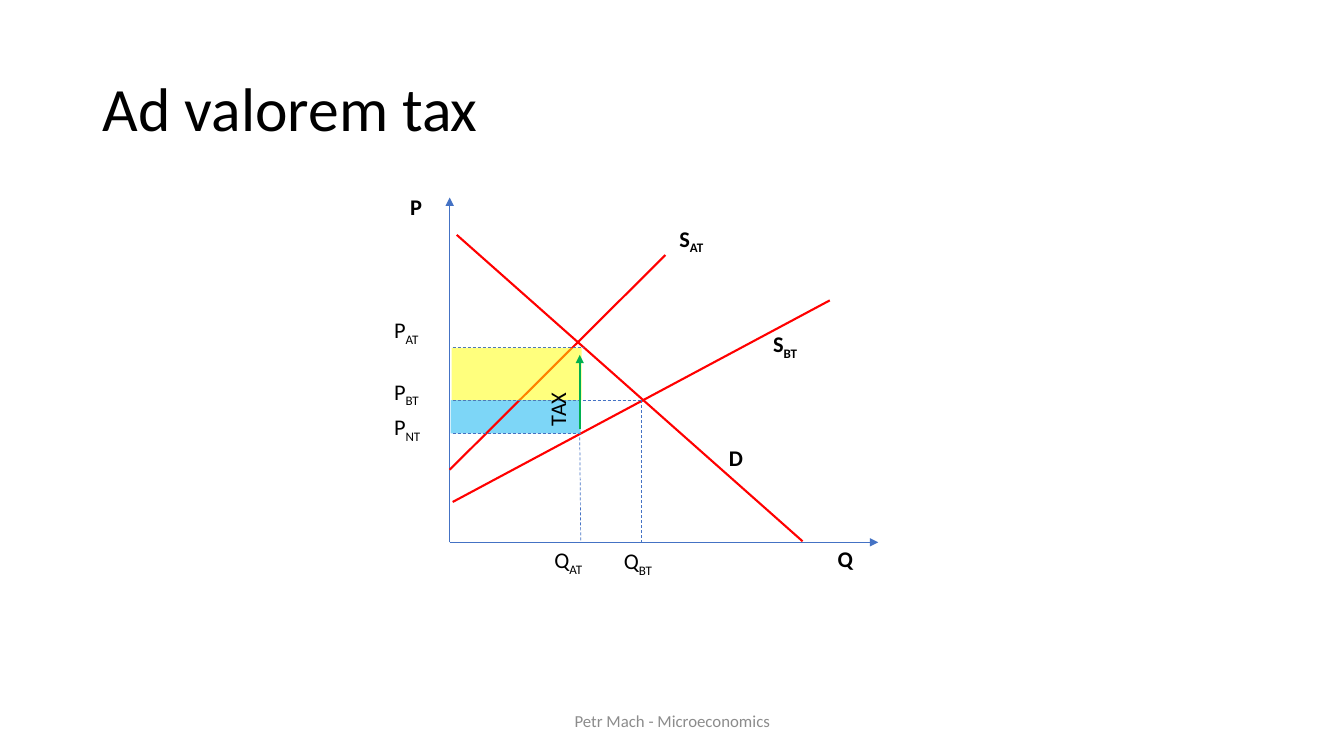
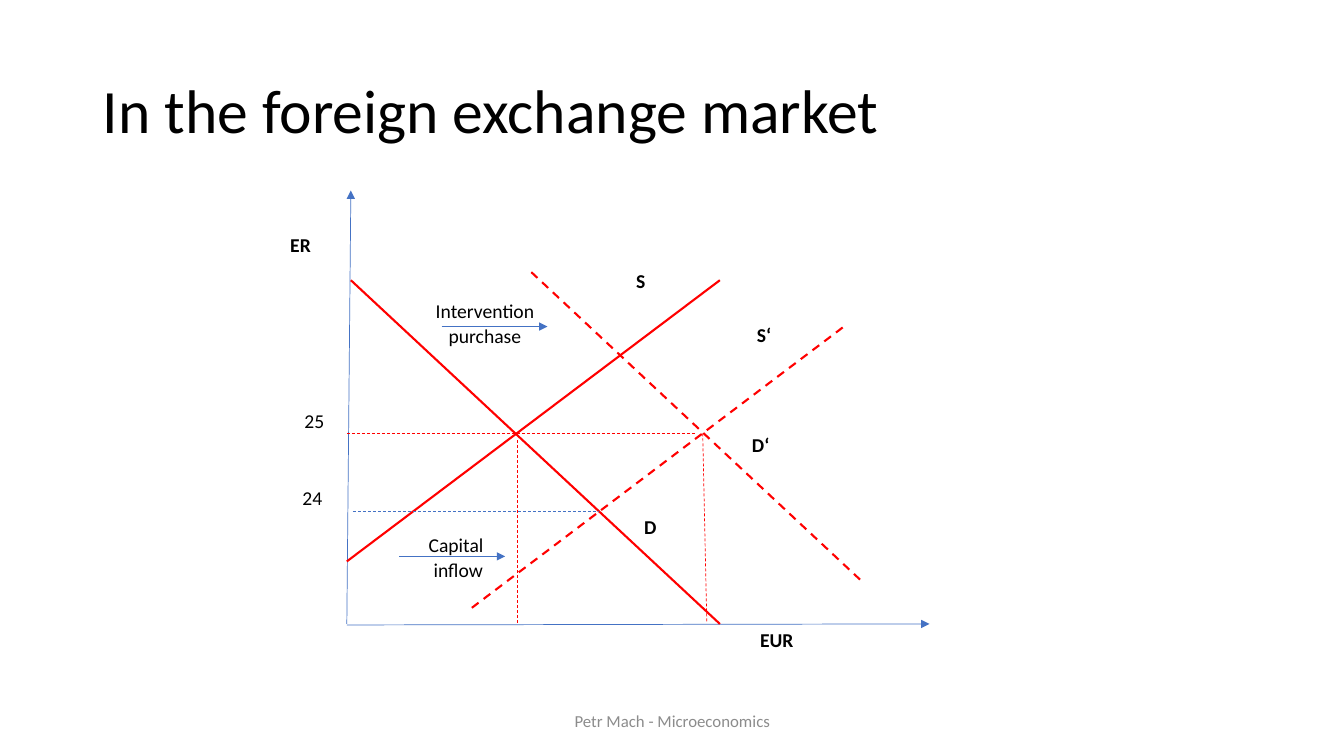
from dataclasses import dataclass

from lxml.etree import SubElement
from pptx import Presentation
from pptx.dml.color import RGBColor as Rgb
from pptx.enum.dml import MSO_LINE as Dash
from pptx.enum.shapes import MSO_CONNECTOR as Connector, MSO_SHAPE as Shape
from pptx.enum.text import MSO_ANCHOR as Anchor, MSO_AUTO_SIZE as AutoSize, PP_ALIGN as Align
from pptx.oxml.ns import qn
from pptx.util import Emu, Pt

PX = 9144  # EMU per px: 100 px to the inch


def px(*lengths):
    return [Emu(length * PX) for length in lengths]


@dataclass(frozen=True)
class Theme:
    font: str = "Calibri"
    ink: str = "000000"
    paper: str = "FFFFFF"
    muted: str = "8C8C8C"
    axis: str = "4472C4"
    curve: str = "FF0000"
    tax: str = "00B050"
    buyer_share: str = "FFFF00"
    seller_share: str = "00B0F0"
    title_size: int = 44
    footer_size: int = 12
    thin: float = 0.5
    thick: float = 1.5


class Deck:
    """Holds the style and the slide being drawn."""

    def __init__(self, theme):
        self.theme = theme
        self.prs = Presentation()
        self.prs.slide_width, self.prs.slide_height = px(1333, 750)
        self.label_size = 14

    def new_slide(self, title, title_top, label_size):
        self.slide = self.prs.slides.add_slide(self.prs.slide_layouts[5])
        self.label_size = label_size
        heading = self.slide.shapes.title
        heading.left, heading.top, heading.width, heading.height = px(92, title_top, 1150, 145)
        self.set_text(heading, title, self.theme.title_size, anchor=Anchor.MIDDLE, spacing=0.9)
        footer = self.slide.shapes.add_textbox(*px(442, 695, 450, 40))
        self.set_text(footer, "Petr Mach - Microeconomics", self.theme.footer_size,
                      color=self.theme.muted, align=Align.CENTER, anchor=Anchor.MIDDLE, spacing=1)

    def set_text(self, box, text, size, sub="", bold=False, color=None,
                 align=Align.LEFT, anchor=Anchor.TOP, spacing=1.07):
        frame = box.text_frame
        frame.word_wrap = True
        frame.auto_size = AutoSize.NONE
        frame.vertical_anchor = anchor
        paragraph = frame.paragraphs[0]
        paragraph.alignment = align
        paragraph.line_spacing = spacing

        def add_run(words):
            run = paragraph.add_run()
            run.text = words
            run.font.name = self.theme.font
            run.font.size = Pt(size)
            run.font.bold = bold
            run.font.color.rgb = Rgb.from_string(color or self.theme.ink)
            return run

        for number, line in enumerate(text.split("\n")):
            if number:
                paragraph.add_line_break()
            add_run(line)
        if sub:
            add_run(sub)._r.get_or_add_rPr().set("baseline", "-25000")

    def rectangle(self, at, color, opacity=100):
        box = self.slide.shapes.add_shape(Shape.RECTANGLE, *px(*at))
        box.shadow.inherit = False
        box.line.fill.background()
        box.fill.solid()
        box.fill.fore_color.rgb = Rgb.from_string(color)
        if opacity < 100:
            tint = box._element.spPr.find(".//" + qn("a:srgbClr"))
            SubElement(tint, qn("a:alpha")).set("val", str(opacity * 1000))
        return box

    def label(self, at, text, sub="", bold=False, align=Align.LEFT):
        self.set_text(self.rectangle(at, self.theme.paper), text, self.label_size,
                      sub, bold, align=align)

    def turned_label(self, at, text):
        box = self.slide.shapes.add_textbox(*px(*at))
        box.rotation = 270
        self.set_text(box, text, self.label_size)

    def line(self, start, end, color, width, dashed=False, arrow=False):
        stroke = self.slide.shapes.add_connector(Connector.STRAIGHT, *px(*start, *end))
        stroke.line.color.rgb = Rgb.from_string(color)
        stroke.line.width = Pt(width)
        if dashed:
            stroke.line.dash_style = Dash.DASH
        if arrow:
            outline = stroke._element.spPr.find(qn("a:ln"))
            SubElement(outline, qn("a:tailEnd")).set("type", "triangle")
        SubElement(stroke._element.spPr, qn("a:effectLst"))

    def arrow(self, start, end):
        self.line(start, end, self.theme.axis, self.theme.thin, arrow=True)

    def curve(self, start, end, dashed=False):
        self.line(start, end, self.theme.curve, self.theme.thick, dashed)

    def guide(self, start, end, color=None):
        self.line(start, end, color or self.theme.axis, self.theme.thin, dashed=True)


def ad_valorem_tax(deck):
    theme = deck.theme
    deck.new_slide("Ad valorem tax", 38, label_size=16)
    axis_x, axis_y, guide_x = 446, 538, 449
    price_after, price_before, price_net = 345, 397, 430
    quantity_after, quantity_before = 576, 636

    # Price and curve labels, with the sellers' tax share among them
    deck.label((381, 403, 73, 52), "P", "NT")
    deck.label((381, 368, 73, 47), "P", "BT")
    deck.rectangle((447, price_before, 129, price_net - price_before), theme.seller_share, 51)
    for at, letter, sub, bold in (
            ((664, 216, 106, 60), "S", "AT", True),
            ((540, 535, 113, 53), "Q", "AT", False),
            ((609, 536, 113, 53), "Q", "BT", False),
            ((381, 307, 73, 61), "P", "AT", False),
            ((713, 434, 57, 47), "D", "", True),
            ((757, 321, 91, 47), "S", "BT", True),
            ((821, 534, 57, 47), "Q", "", True),
            ((397, 185, 57, 47), "P", "", True)):
        deck.label(at, letter, sub, bold)

    # Axes, supply before and after tax, demand
    deck.arrow((axis_x, axis_y), (axis_x, 196))
    deck.arrow((axis_x, axis_y), (871, axis_y))
    deck.curve((449, 498), (823, 298))
    deck.curve((453, 233), (796, 537))
    deck.curve((axis_x, 466), (660, 253))

    # Guides from the equilibria to the axes
    for price, quantity in ((price_before, quantity_before), (price_after, 579),
                            (price_net, quantity_after)):
        deck.guide((guide_x, price), (quantity, price))
    deck.guide((575, 434), (quantity_after, axis_y))
    deck.guide((quantity_before, price_before), (quantity_before, axis_y))

    # Buyers' share and the tax itself
    deck.rectangle((448, price_after, 129, price_before - price_after), theme.buyer_share, 51)
    deck.line((575, 426), (575, 352), theme.tax, theme.thick, arrow=True)
    deck.turned_label((505, 349, 111, 56), "TAX")


def foreign_exchange(deck):
    theme = deck.theme
    deck.new_slide("In the foreign exchange market", 40, label_size=14)
    axis_x, axis_y = 344, 619
    rate_pegged, rate_free = 430, 507

    # Labels
    for at, text, bold, align in (
            ((392, 522, 125, 88), "Capital \ninflow", False, Align.CENTER),
            ((290, 476, 79, 74), "24", False, Align.LEFT),
            ((741, 314, 90, 53), "S‘", True, Align.LEFT),
            ((736, 423, 91, 53), "D‘", True, Align.LEFT),
            ((395, 290, 172, 88), "Intervention purchase", False, Align.CENTER),
            ((292, 399, 78, 53), "25", False, Align.LEFT),
            ((629, 504, 61, 53), "D", True, Align.LEFT),
            ((621, 260, 61, 53), "S", True, Align.LEFT),
            ((744, 616, 109, 53), "EUR", True, Align.LEFT),
            ((278, 225, 75, 53), "ER", True, Align.LEFT)):
        deck.label(at, text, bold=bold, align=align)

    # Axes
    deck.arrow((axis_x, axis_y), (348, 189))
    deck.arrow((axis_x, 620), (922, axis_y))

    # Supply and demand, then both after their shift
    deck.curve((axis_x, 557), (714, 278))
    deck.curve((348, 278), (714, axis_y))
    deck.curve((527, 270), (853, 575), dashed=True)
    deck.curve((468, 603), (837, 324), dashed=True)

    # Guides to the axes
    deck.guide((axis_x, rate_pegged), (690, rate_pegged), theme.curve)
    deck.guide((350, rate_free), (594, rate_free))
    deck.guide((513, 437), (513, axis_y), theme.curve)
    deck.guide((697, rate_pegged), (701, 617), theme.curve)

    # Directions of the shifts
    for left, top in ((438, 324), (396, 552)):
        deck.arrow((left, top), (left + 105, top))


def main():
    deck = Deck(Theme())
    ad_valorem_tax(deck)
    foreign_exchange(deck)
    deck.prs.save("out.pptx")


if __name__ == "__main__":
    main()
